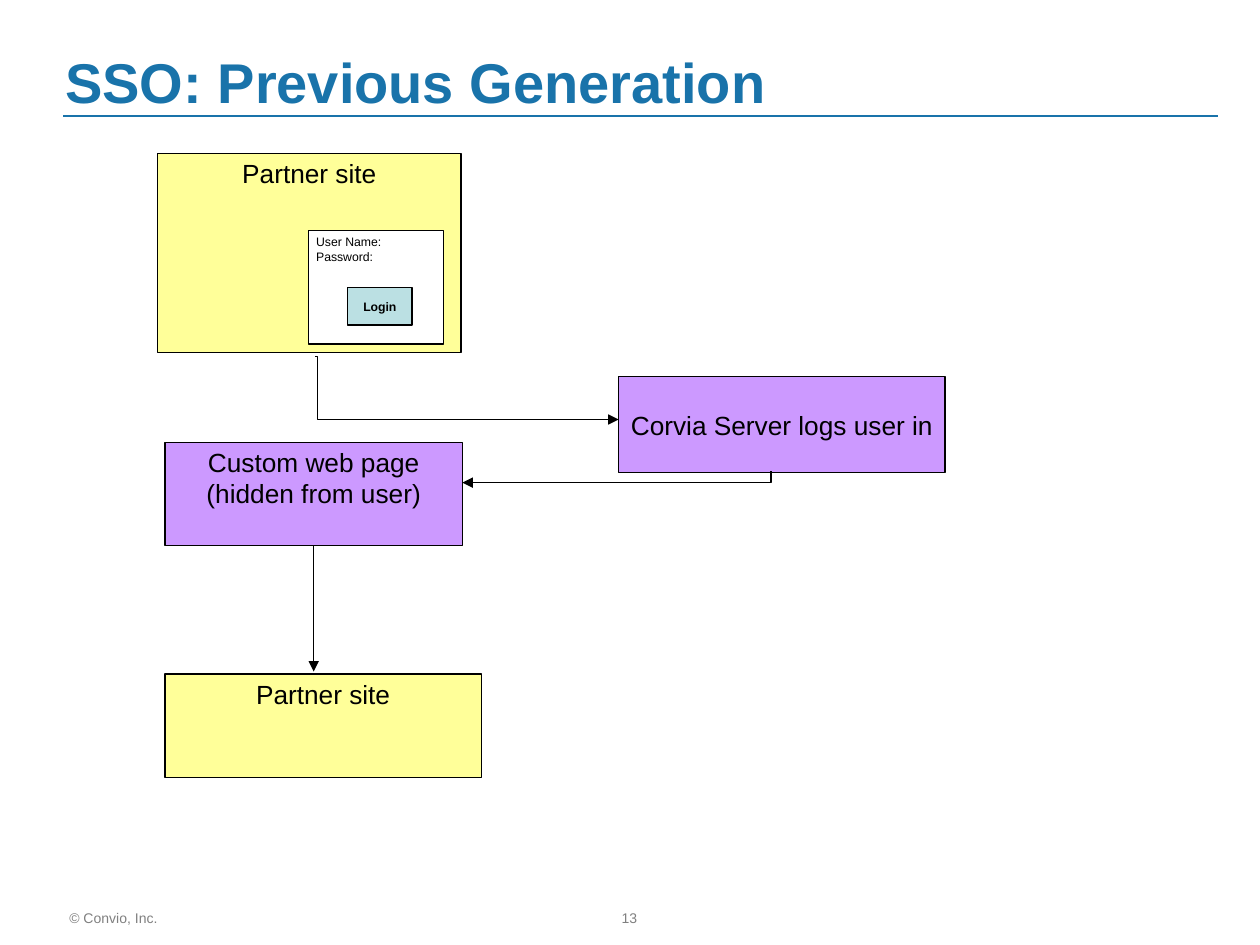
"""Builds the slide that shows the previous single sign-on flow."""
from lxml.etree import SubElement
from pptx import Presentation
from pptx.dml.color import RGBColor
from pptx.enum.shapes import MSO_CONNECTOR, MSO_SHAPE
from pptx.enum.text import MSO_ANCHOR, PP_ALIGN
from pptx.oxml.ns import qn
from pptx.util import Inches, Pt

COLORS = {"blue": "1973AA", "gray": "808080", "black": "000000", "white": "FFFFFF",
          "yellow": "FFFF99", "violet": "CC99FF", "aqua": "BBE0E3"}
LEFT, MID = PP_ALIGN.LEFT, PP_ALIGN.CENTER
TOP, CENTER, BOTTOM = MSO_ANCHOR.TOP, MSO_ANCHOR.MIDDLE, MSO_ANCHOR.BOTTOM
PAD = (0.06, 0.03, 0.06, 0.03)

LABELS = [
    ("© Convio, Inc.", (0.5, 7.17, 0.86, 0.24), 8, "gray", False, LEFT, TOP, (0.05, 0.05, 0.1, 0.05)),
    ("13", (3.83, 7.17, 2.33, 0.27), 8, "gray", False, MID, TOP, (0.1, 0.05, 0.1, 0.05)),
    ("SSO: Previous Generation", (0.42, 0.33, 9.17, 0.63), 32, "blue", True, LEFT, BOTTOM,
     (0.1, 0.05, 0.1, 0.05)),
]
BOXES = {
    "site": ("Partner site", (1.25, 1.22, 2.41, 1.58), "yellow", 15, False, MID, TOP),
    "form": ("User Name:\nPassword:", (2.45, 1.83, 1.07, 0.9), "white", 7, False, LEFT, TOP),
    "login": ("Login", (2.76, 2.28, 0.51, 0.3), "aqua", 7, True, MID, CENTER),
    "server": ("Corvia Server logs user in", (4.91, 2.99, 2.59, 0.76), "violet", 15, False, MID, CENTER),
    "page": ("Custom web page\n(hidden from user)", (1.31, 3.51, 2.36, 0.82), "violet", 15, False, MID, TOP),
    "return": ("Partner site", (1.31, 5.35, 2.51, 0.82), "yellow", 15, False, MID, TOP),
}


def color(name):
    return RGBColor.from_string(COLORS[name])


def write(shape, text, size, ink, bold, align, anchor, pad):
    frame = shape.text_frame
    frame.word_wrap = True
    frame.vertical_anchor = anchor
    (frame.margin_left, frame.margin_top,
     frame.margin_right, frame.margin_bottom) = map(Inches, pad)
    frame.text = text
    for para in frame.paragraphs:
        para.alignment = align
        for run in para.runs:
            font = run.font
            font.name, font.size, font.bold = "Arial", Pt(size), bold
            font.color.rgb = color(ink)


def link(slide, kind, start, end, ink="black", width=0.75, arrow=True):
    line = slide.shapes.add_connector(kind, *map(Inches, start + end))
    line.line.color.rgb = color(ink)
    line.line.width = Pt(width)
    if arrow:
        SubElement(line.line._get_or_add_ln(), qn("a:tailEnd"), type="triangle")
    SubElement(line._element.spPr, qn("a:effectLst"))
    return line


def main():
    deck = Presentation()
    deck.slide_width, deck.slide_height = Inches(10), Inches(7.5)
    slide = deck.slides.add_slide(deck.slide_layouts[6])

    for text, place, *style in LABELS:
        write(slide.shapes.add_textbox(*map(Inches, place)), text, *style)
    slide.shapes[0].text_frame.word_wrap = False
    link(slide, MSO_CONNECTOR.STRAIGHT, (0.5, 0.92), (9.67, 0.92), "blue", 1, False)

    shapes = {}
    for name, (text, place, fill, size, bold, align, anchor) in BOXES.items():
        box = slide.shapes.add_shape(MSO_SHAPE.RECTANGLE, *map(Inches, place))
        box.shadow.inherit = False
        box.fill.solid()
        box.fill.fore_color.rgb = color(fill)
        box.line.color.rgb = color("black")
        box.line.width = Pt(0.75)
        write(box, text, size, "black", bold, align, anchor, PAD)
        shapes[name] = box

    send = link(slide, MSO_CONNECTOR.ELBOW, (2.5, 2.83), (4.91, 3.33))
    guides = send._element.spPr.prstGeom.get_or_add_avLst()
    SubElement(guides, qn("a:gd"), name="adj1", fmla="val 900")

    down = link(slide, MSO_CONNECTOR.STRAIGHT, (2.49, 4.33), (2.49, 5.33))
    down.begin_connect(shapes["page"], 2)

    back = link(slide, MSO_CONNECTOR.ELBOW, (4.85, 2.56), (4.94, 5.01))
    back._element.spPr.prstGeom.set("prst", "bentConnector2")
    back._element.spPr.xfrm.set("rot", str(90 * 60000))

    deck.save("out.pptx")


if __name__ == "__main__":
    main()
